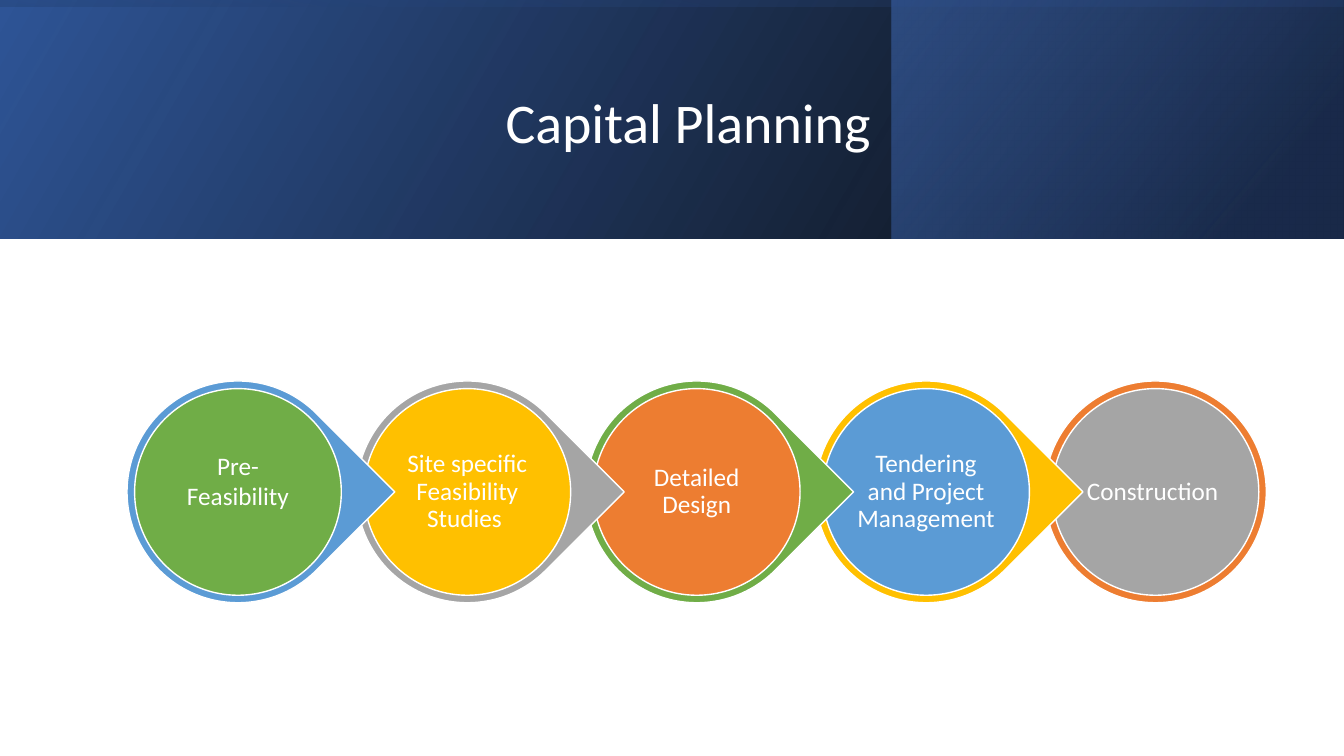
"""Builds the Capital Planning slide: a gradient banner above a five-step chain."""
import lxml.etree
import pptx
import pptx.dml.color
import pptx.enum.shapes
import pptx.enum.text
import pptx.oxml.ns
import pptx.util

SLIDE_WIDTH, SLIDE_HEIGHT = 13.33, 7.5
BANNER_HEIGHT = 2.37
TITLE = "Capital Planning"
TITLE_BOX = (1.51, 0.38, 10.63, 1.72)
WHITE = "FFFFFF"
FONT = "Calibri"

# left, width, rotation, gradient angle, stops of (position, colour, opacity)
BANDS = [
    (0, SLIDE_WIDTH, 0, 330, [(0, "000000", 96), (100, "2F5597", 100)]),
    (8.84, 4.48, 0, 320, [(19, "203864", 68), (100, "4472C4", 48)]),
    (0, SLIDE_WIDTH, 270, 350, [(23, "2F5597", 16), (99, "000000", 45)]),
]

# wording, outer colour, inner colour, line spacing, bottom inset
STEPS = [
    ("Pre-Feasibility", "5B9BD5", "70AD47", 1.0, 0.25),
    ("Site specific Feasibility Studies ", "A5A5A5", "FFC000", 0.9, 0.03),
    ("Detailed Design", "70AD47", "ED7D31", 0.9, 0.03),
    ("Tendering and Project Management", "FFC000", "5B9BD5", 0.9, 0.03),
    ("Construction ", "ED7D31", "A5A5A5", 0.9, 0.03),
]
FIRST_CENTER, STEP_PITCH, CENTER_Y = 2.36, 2.275, 4.88
OUTER_SIZE, INNER_SIZE, LABEL_SIZE = 2.2, 2.05, 1.47
INSET = 0.03

SHAPES = pptx.enum.shapes.MSO_SHAPE


def color(hex_string):
    return pptx.dml.color.RGBColor.from_string(hex_string)


def inches(*lengths):
    return [pptx.util.Inches(length) for length in lengths]


def centered(center_x, center_y, width, height):
    return inches(center_x - width / 2, center_y - height / 2, width, height)


def add_gradient(shape, angle, stops):
    properties = shape.element.spPr
    gradient = lxml.etree.Element(pptx.oxml.ns.qn("a:gradFill"), rotWithShape="1")
    stop_list = lxml.etree.SubElement(gradient, pptx.oxml.ns.qn("a:gsLst"))
    for position, hex_string, opacity in stops:
        stop = lxml.etree.SubElement(
            stop_list, pptx.oxml.ns.qn("a:gs"), pos=str(position * 1000))
        stop_color = lxml.etree.SubElement(
            stop, pptx.oxml.ns.qn("a:srgbClr"), val=hex_string)
        lxml.etree.SubElement(
            stop_color, pptx.oxml.ns.qn("a:alpha"), val=str(opacity * 1000))
    lxml.etree.SubElement(
        gradient, pptx.oxml.ns.qn("a:lin"), ang=str(angle * 60000), scaled="0")
    properties.find(pptx.oxml.ns.qn("a:prstGeom")).addnext(gradient)


def add_band(slide, left, width, rotation, angle, stops):
    size = (BANNER_HEIGHT, width) if rotation else (width, BANNER_HEIGHT)
    band = slide.shapes.add_shape(
        SHAPES.RECTANGLE, *centered(left + width / 2, BANNER_HEIGHT / 2, *size))
    band.rotation = rotation
    band.element.spPr.find(pptx.oxml.ns.qn("a:xfrm")).set("flipH", "1")
    band.shadow.inherit = False
    band.line.fill.background()
    add_gradient(band, angle, stops)


def add_disc(slide, kind, center_x, size, fill):
    disc = slide.shapes.add_shape(kind, *centered(center_x, CENTER_Y, size, size))
    disc.shadow.inherit = False
    disc.fill.solid()
    disc.fill.fore_color.rgb = color(fill)
    disc.line.color.rgb = color(WHITE)
    disc.line.width = pptx.util.Pt(1)
    return disc


def write(frame, text, size, line_spacing):
    frame.word_wrap = True
    frame.auto_size = pptx.enum.text.MSO_AUTO_SIZE.NONE
    frame.vertical_anchor = pptx.enum.text.MSO_ANCHOR.MIDDLE
    paragraph = frame.paragraphs[0]
    paragraph.text = text
    paragraph.alignment = pptx.enum.text.PP_ALIGN.CENTER
    paragraph.line_spacing = line_spacing
    paragraph.font.name = FONT
    paragraph.font.size = pptx.util.Pt(size)
    paragraph.font.color.rgb = color(WHITE)


def add_step(slide, index, text, outer, inner, line_spacing, bottom_inset):
    center_x = FIRST_CENTER + index * STEP_PITCH
    is_last = index == len(STEPS) - 1
    kind = SHAPES.OVAL if is_last else SHAPES.TEAR
    back = add_disc(slide, kind, center_x, OUTER_SIZE, outer)
    back.rotation = 0 if is_last else 45
    add_disc(slide, SHAPES.OVAL, center_x, INNER_SIZE, inner)
    label = slide.shapes.add_textbox(
        *centered(center_x, CENTER_Y, LABEL_SIZE, LABEL_SIZE))
    frame = label.text_frame
    frame.margin_left, frame.margin_top, frame.margin_right, frame.margin_bottom = inches(
        INSET, INSET, INSET, bottom_inset)
    write(frame, text, 18, line_spacing)


def main():
    presentation = pptx.Presentation()
    presentation.slide_width, presentation.slide_height = inches(SLIDE_WIDTH, SLIDE_HEIGHT)
    slide = presentation.slides.add_slide(presentation.slide_layouts[5])
    for band in BANDS:
        add_band(slide, *band)

    title = slide.shapes.title
    title.element.getparent().append(title.element)
    title.left, title.top, title.width, title.height = inches(*TITLE_BOX)
    write(title.text_frame, TITLE, 40, 0.9)

    for index, step in reversed(list(enumerate(STEPS))):
        add_step(slide, index, *step)
    presentation.save("out.pptx")


if __name__ == "__main__":
    main()
